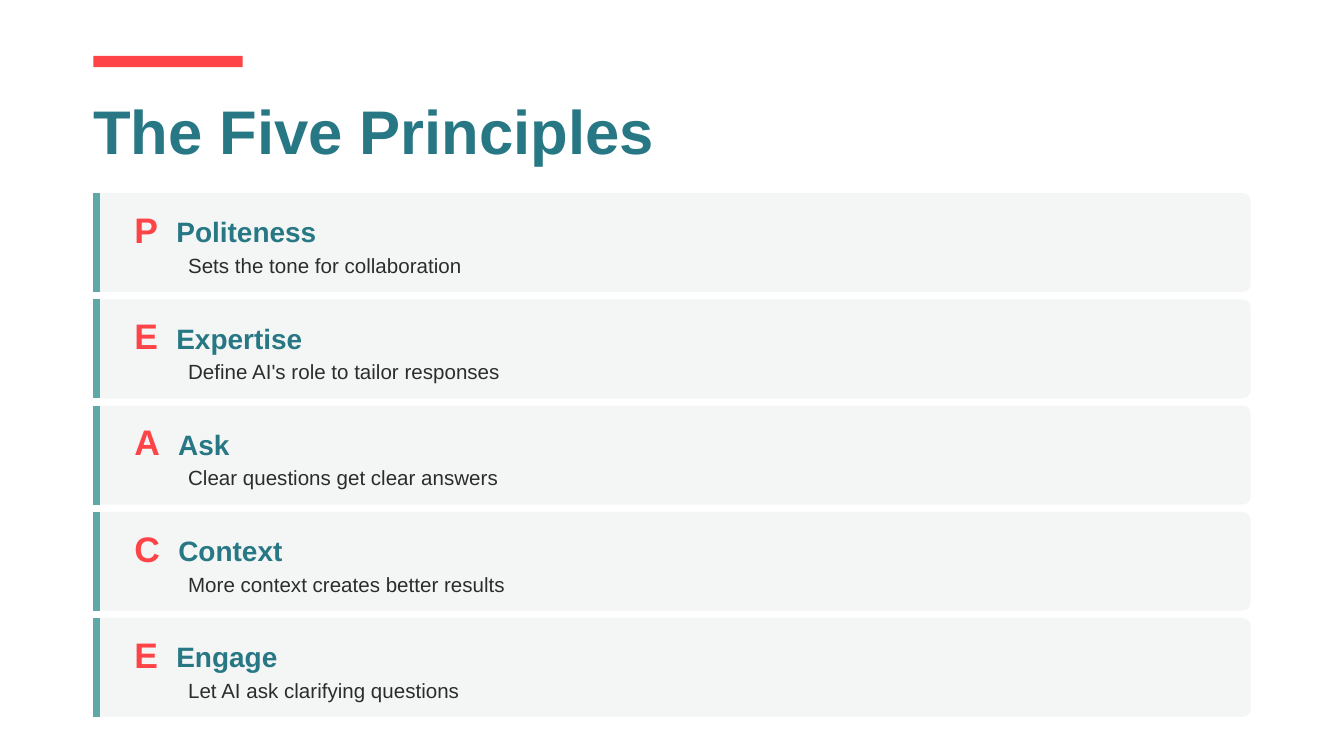
from dataclasses import dataclass

from lxml.etree import SubElement
from pptx import Presentation
from pptx.dml.color import RGBColor
from pptx.enum.shapes import MSO_CONNECTOR, MSO_SHAPE
from pptx.oxml.ns import qn
from pptx.util import Pt


@dataclass(frozen=True)
class Theme:
    font: str = "Arial"
    background: str = "FFFFFF"
    accent: str = "FE4447"
    heading: str = "277884"
    edge: str = "5EA8A7"
    card: str = "F4F6F6"
    body: str = "2C2C2C"
    title_size: float = 33
    letter_size: float = 19
    name_size: float = 15
    body_size: float = 11


theme = Theme()


def add_block(page, kind, left, top, width, height, color):
    block = page.shapes.add_shape(kind, Pt(left), Pt(top), Pt(width), Pt(height))
    block.shadow.inherit = False
    block.fill.solid()
    block.fill.fore_color.rgb = RGBColor.from_string(color)
    block.line.fill.background()
    return block


def add_text(page, left, top, width, height, text, size, color, bold=True):
    box = page.shapes.add_textbox(Pt(left), Pt(top), Pt(width), Pt(height))
    frame = box.text_frame
    frame.word_wrap = True
    frame.margin_left = frame.margin_right = frame.margin_top = frame.margin_bottom = 0
    para = frame.paragraphs[0]
    span = para.add_run()
    span.text = text
    span.font.name = theme.font
    span.font.size = Pt(size)
    span.font.bold = bold
    span.font.color.rgb = RGBColor.from_string(color)
    return para


deck = Presentation()
deck.slide_width, deck.slide_height = Pt(720), Pt(405)
page = deck.slides.add_slide(deck.slide_layouts[6])
page.background.fill.solid()
page.background.fill.fore_color.rgb = RGBColor.from_string(theme.background)

add_block(page, MSO_SHAPE.RECTANGLE, 50, 30, 80, 6, theme.accent)
title = add_text(page, 50, 50, 632, 37.5, "The Five Principles", theme.title_size, theme.heading)
title.space_after = Pt(16)

principles = [
    ("Politeness", 94.5, 76, "Sets the tone for collaboration"),
    ("Expertise", 94.5, 69, "Define AI's role to tailor responses"),
    ("Ask", 95.5, 28, "Clear questions get clear answers"),
    ("Context", 95.5, 57, "More context creates better results"),
    ("Engage", 94.5, 55.5, "Let AI ask clarifying questions"),
]
first_top, row_step, card_height = 103.5, 56.9, 53

for row, (name, name_left, name_width, summary) in enumerate(principles):
    top = first_top + row * row_step
    card = add_block(page, MSO_SHAPE.ROUNDED_RECTANGLE, 50, top, 620, card_height, theme.card)
    card.adjustments[0] = 0.08

    edge = page.shapes.add_connector(
        MSO_CONNECTOR.STRAIGHT, Pt(51.9), Pt(top), Pt(51.9), Pt(top + card_height)
    )
    edge.line.color.rgb = RGBColor.from_string(theme.edge)
    edge.line.width = Pt(3.75)
    SubElement(edge._element.spPr, qn("a:effectLst"))

    add_text(page, 72, top + 8, 13.5, 21.5, name[0], theme.letter_size, theme.accent)
    add_text(page, name_left, top + 11.7, name_width, 17, name, theme.name_size, theme.heading)
    para = add_text(
        page, 100.8, top + 32, 562, 13.2, summary, theme.body_size, theme.body, bold=False
    )
    para.line_spacing = Pt(13.2)
    para.space_before = Pt(2)

deck.save("out.pptx")
